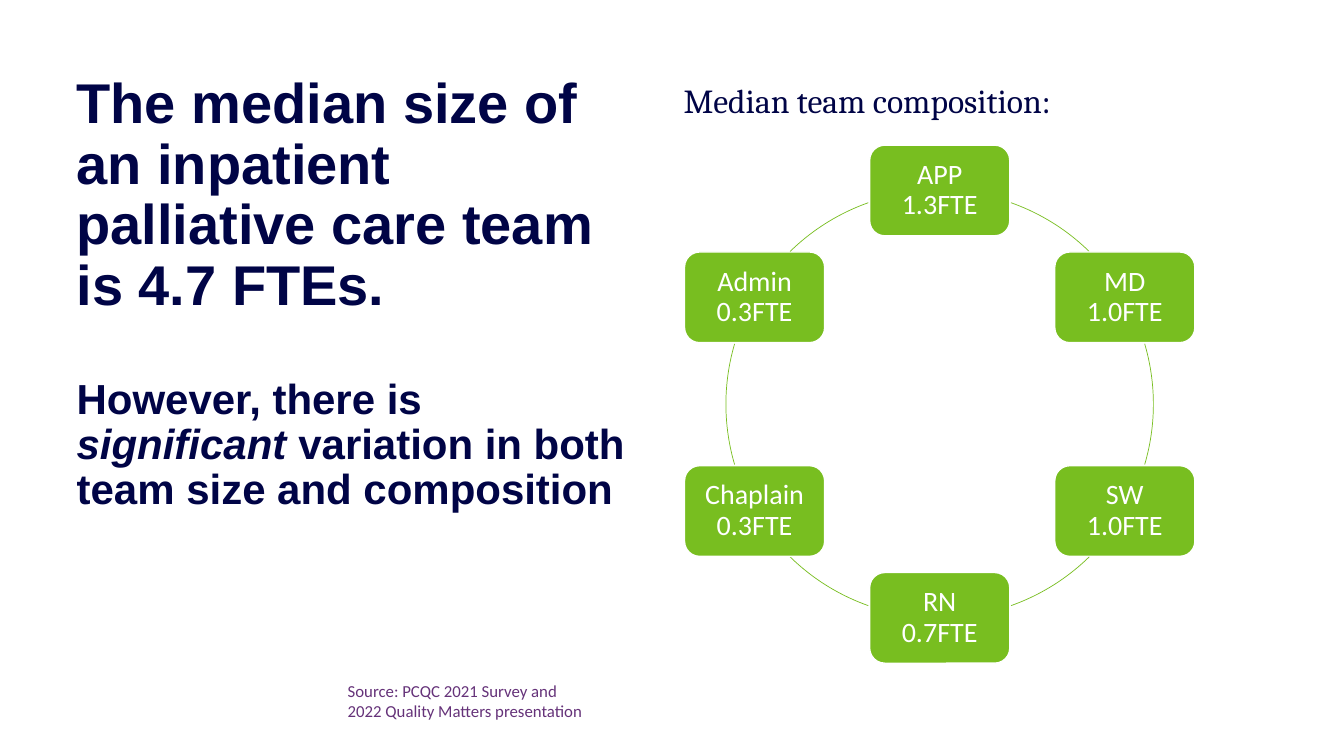
from math import cos, radians, sin

from pptx import Presentation
from pptx.dml.color import RGBColor
from pptx.enum.shapes import MSO_SHAPE as Shape
from pptx.enum.text import MSO_ANCHOR as Anchor, MSO_AUTO_SIZE as AutoSize, PP_ALIGN as Align
from pptx.oxml.ns import qn
from pptx.util import Inches, Pt

NAVY, PURPLE, GREEN, WHITE = "000446", "653279", "78BE20", "FFFFFF"


def color(hex_code):
    return RGBColor.from_string(hex_code)


def format_text(item, font_name, size, hex_code, **styles):
    values = {"name": font_name, "size": Pt(size), **styles}
    for name, value in values.items():
        setattr(item.font, name, value)
    item.font.color.rgb = color(hex_code)


deck = Presentation()
deck.slide_width, deck.slide_height = Inches(13.33), Inches(7.5)
page = deck.slides.add_slide(deck.slide_layouts[1])
title, body = page.shapes.title, page.placeholders[1]

# Placeholder positions and margins
for box, bounds in ((title, (0.75, 0.75, 5.5, 4.39)), (body, (6.77, 0.75, 5.87, 0.82))):
    box.left, box.top, box.width, box.height = map(Inches, bounds)
    frame = box.text_frame
    frame.word_wrap = True
    frame.auto_size = AutoSize.NONE
    frame.vertical_anchor = Anchor.TOP
    frame.margin_left = frame.margin_top = frame.margin_right = frame.margin_bottom = 0

# Title: main finding, then the caveat
finding = title.text_frame.paragraphs[0]
caveat = title.text_frame.add_paragraph()
caveat.space_before = Pt(43.2)
for para, size, pieces in (
    (finding, 40, [("The median size of an inpatient palliative care team is 4.7 FTEs.", False)]),
    (caveat, 30, [("However, there is ", False), ("significant", True),
                  (" variation in both team size and composition", False)]),
):
    para.alignment = Align.LEFT
    para.line_spacing = 0.9
    for text, italic in pieces:
        span = para.add_run()
        span.text = text
        format_text(span, "Arial", size, NAVY, bold=True, italic=italic)

# Heading above the ring
heading = body.text_frame.paragraphs[0]
properties = heading._p.get_or_add_pPr()
properties.append(properties.makeelement(qn("a:buNone"), {}))
heading.text = "Median team composition:"
heading.line_spacing = 1.1
heading.space_before, heading.space_after = Pt(0), Pt(10)
format_text(heading, "Cambria", 24, NAVY)

# Slight left indent shared by title and heading
for para in (finding, caveat, heading):
    properties = para._p.get_or_add_pPr()
    properties.set("marL", str(Inches(0.01)))
    properties.set("indent", "0")

# Source note
note = page.shapes.add_textbox(Inches(3.35), Inches(6.7), Inches(2.56), Inches(0.5))
note.text_frame.word_wrap = False
note.text_frame.text = "Source: PCQC 2021 Survey and\n2022 Quality Matters presentation"
for para in note.text_frame.paragraphs:
    format_text(para, "Calibri", 12, PURPLE)

# Ring of roles, clockwise from the top, each with the arc that follows it
center_x, center_y, radius = 9.32, 4.01, 2.12
card_width, card_height = 1.39, 0.9
team = [
    ("APP 1.3FTE", 289.5, 314.4),
    ("MD 1.0FTE", 343.6, 16.4),
    ("SW 1.0FTE", 45.6, 70.5),
    ("RN 0.7FTE", 109.5, 134.4),
    ("Chaplain 0.3FTE", 163.6, 196.4),
    ("Admin 0.3FTE", 225.6, 250.5),
]
for index, (label, arc_start, arc_end) in enumerate(team):
    angle = radians(index * 360 / len(team) - 90)
    card = page.shapes.add_shape(
        Shape.ROUNDED_RECTANGLE,
        Inches(center_x + radius * cos(angle) - card_width / 2),
        Inches(center_y + radius * sin(angle) - card_height / 2),
        Inches(card_width), Inches(card_height))
    card.shadow.inherit = False
    card.fill.solid()
    card.fill.fore_color.rgb = color(GREEN)
    card.line.color.rgb = color(WHITE)
    card.line.width = Pt(1)
    frame = card.text_frame
    frame.word_wrap = True
    frame.vertical_anchor = Anchor.MIDDLE
    frame.margin_left = frame.margin_right = Inches(0.13)
    frame.text = label
    para = frame.paragraphs[0]
    para.alignment = Align.CENTER
    para.line_spacing = 0.9
    format_text(para, "Calibri", 20, WHITE)

    arc = page.shapes.add_shape(
        Shape.ARC, Inches(center_x - radius), Inches(center_y - radius),
        Inches(2 * radius), Inches(2 * radius))
    arc.shadow.inherit = False
    arc.fill.background()
    # Adjustments count 0.6 per degree
    arc.adjustments[0], arc.adjustments[1] = arc_start * 0.6, arc_end * 0.6
    arc.line.color.rgb = color(GREEN)
    arc.line.width = Pt(0.5)

deck.save("out.pptx")
